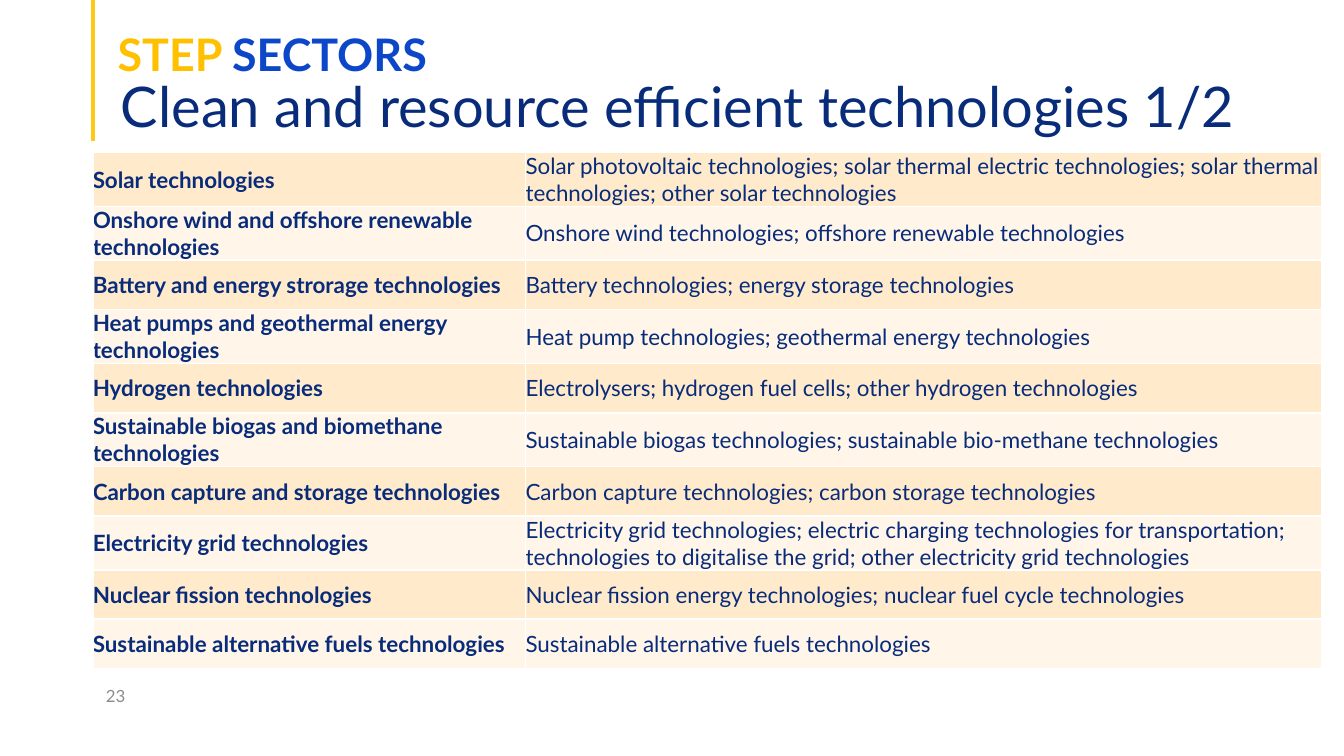
from lxml import etree
from pptx import Presentation
from pptx.dml.color import RGBColor
from pptx.enum.shapes import MSO_CONNECTOR
from pptx.enum.text import MSO_ANCHOR, MSO_AUTO_SIZE, PP_ALIGN
from pptx.oxml import parse_xml
from pptx.oxml.ns import qn
from pptx.util import Pt

STRAIGHT = MSO_CONNECTOR.STRAIGHT
MIDDLE, BOTTOM = MSO_ANCHOR.MIDDLE, MSO_ANCHOR.BOTTOM
LEFT = PP_ALIGN.LEFT
NO_FIT = MSO_AUTO_SIZE.NONE
DML = "http://schemas.openxmlformats.org/drawingml/2006/main"

THEME = {
    "font": "Lato",
    "navy": "082B7A", "blue": "0D47C9", "gold": "FFC000", "rule": "FFC817",
    "gray": "8C8C8C", "bands": ("FFEBCC", "FFF5E8"), "border": "FFFFFF",
    "title": 30, "kicker": 24, "cell": 12, "number": 9,
}


def write(para, text, size, color, bold=False):
    """Add text to a paragraph in the theme font; a newline is a line break."""
    for i, part in enumerate(text.split("\n")):
        if i:
            para.add_line_break()
        run = para.add_run()
        run.text = part
        look = {"name": THEME["font"], "size": Pt(THEME[size]), "bold": bold}
        for key, value in look.items():
            setattr(run.font, key, value)
        run.font.color.rgb = RGBColor.from_string(THEME[color])


def frame(shape, box, pads, anchor):
    """Place a text shape and set up its frame; return the first paragraph."""
    for key, value in zip(("left", "top", "width", "height"), box):
        setattr(shape, key, Pt(value))
    text = shape.text_frame
    look = {"word_wrap": True, "auto_size": NO_FIT, "vertical_anchor": anchor}
    for side, pad in zip(("left", "top", "right", "bottom"), pads):
        look["margin_" + side] = Pt(pad)
    for key, value in look.items():
        setattr(text, key, value)
    para = text.paragraphs[0]
    para.alignment = LEFT
    return para


deck = Presentation()
deck.slide_width, deck.slide_height = Pt(720), Pt(405)
slide = deck.slides.add_slide(deck.slide_layouts[5])
shapes = slide.shapes

# Gold rule at the left of the heading
rule = shapes.add_connector(STRAIGHT, Pt(49.7), Pt(0), Pt(49.7), Pt(75.6))
rule.line.color.rgb = RGBColor.from_string(THEME["rule"])
rule.line.width = Pt(2.25)
etree.SubElement(rule._element.spPr, qn("a:effectLst"))

# Heading: title and the line above it
para = frame(shapes.title, (57.6, 28.8, 620.6, 46.1), (7.2, 3.6, 7.2, 0), BOTTOM)
para.line_spacing = 0.9
write(para, "Clean and resource efficient technologies 1/2", "title", "navy")

kicker = shapes.add_textbox(0, 0, 0, 0)
para = frame(kicker, (57.6, 11.5, 223.9, 34.6), (5.4, 2.7, 5.4, 2.7), MSO_ANCHOR.TOP)
write(para, "STEP ", "kicker", "gold", True)
write(para, "SECTORS", "kicker", "blue", True)

# Page number
number = shapes.add_textbox(0, 0, 0, 0)
para = frame(number, (49.7, 362.2, 162, 21.6), (7.2, 3.6, 7.2, 3.6), MIDDLE)
write(para, "23", "number", "gray")

# Table of sectors: name, technologies, row height
TALL, LOW = 28.8, 26.5
ROWS = [
    ("Solar technologies",
     "Solar photovoltaic technologies; solar thermal electric technologies; "
     "solar thermal technologies; other solar technologies", TALL),
    ("Onshore wind and offshore renewable technologies",
     "Onshore wind technologies; offshore renewable technologies", TALL),
    ("Battery and energy strorage technologies",
     "Battery technologies; energy storage technologies", LOW),
    ("Heat pumps and geothermal energy technologies",
     "Heat pump technologies; geothermal energy technologies", TALL),
    ("Hydrogen technologies",
     "Electrolysers; hydrogen fuel cells; other hydrogen technologies", LOW),
    ("Sustainable biogas and biomethane technologies",
     "Sustainable biogas technologies; sustainable bio-methane technologies", TALL),
    ("Carbon capture and storage technologies",
     "Carbon capture technologies; carbon storage technologies", LOW),
    ("Electricity grid technologies",
     "Electricity grid technologies; electric charging technologies for "
     "transportation; \ntechnologies to digitalise the grid; "
     "other electricity grid technologies", TALL),
    ("Nuclear fission technologies",
     "Nuclear fission energy technologies; nuclear fuel cycle technologies", LOW),
    ("Sustainable alternative fuels technologies",
     "Sustainable alternative fuels technologies", LOW),
]
COLS = (231.9, 426.3)
high = sum(row[2] for row in ROWS)
table = shapes.add_table(len(ROWS), len(COLS), Pt(49.7), Pt(81.7),
                         Pt(sum(COLS)), Pt(high)).table
table.first_row = False
for col, width in zip(table.columns, COLS):
    col.width = Pt(width)

for r, (name, techs, height) in enumerate(ROWS):
    table.rows[r].height = Pt(height)
    for c, text in enumerate((name, techs)):
        cell = table.cell(r, c)
        cell.vertical_anchor = MIDDLE
        for side in ("left", "top", "right", "bottom"):
            setattr(cell, "margin_" + side, 0)
        props = cell._tc.get_or_add_tcPr()
        for edge in ("lnL", "lnR", "lnT", "lnB"):
            props.append(parse_xml(
                f'<a:{edge} xmlns:a="{DML}" w="{Pt(1)}"><a:solidFill>'
                f'<a:srgbClr val="{THEME["border"]}"/></a:solidFill></a:{edge}>'))
        cell.fill.solid()
        cell.fill.fore_color.rgb = RGBColor.from_string(THEME["bands"][r % 2])
        write(cell.text_frame.paragraphs[0], text, "cell", "navy", c == 0)

deck.save("out.pptx")
